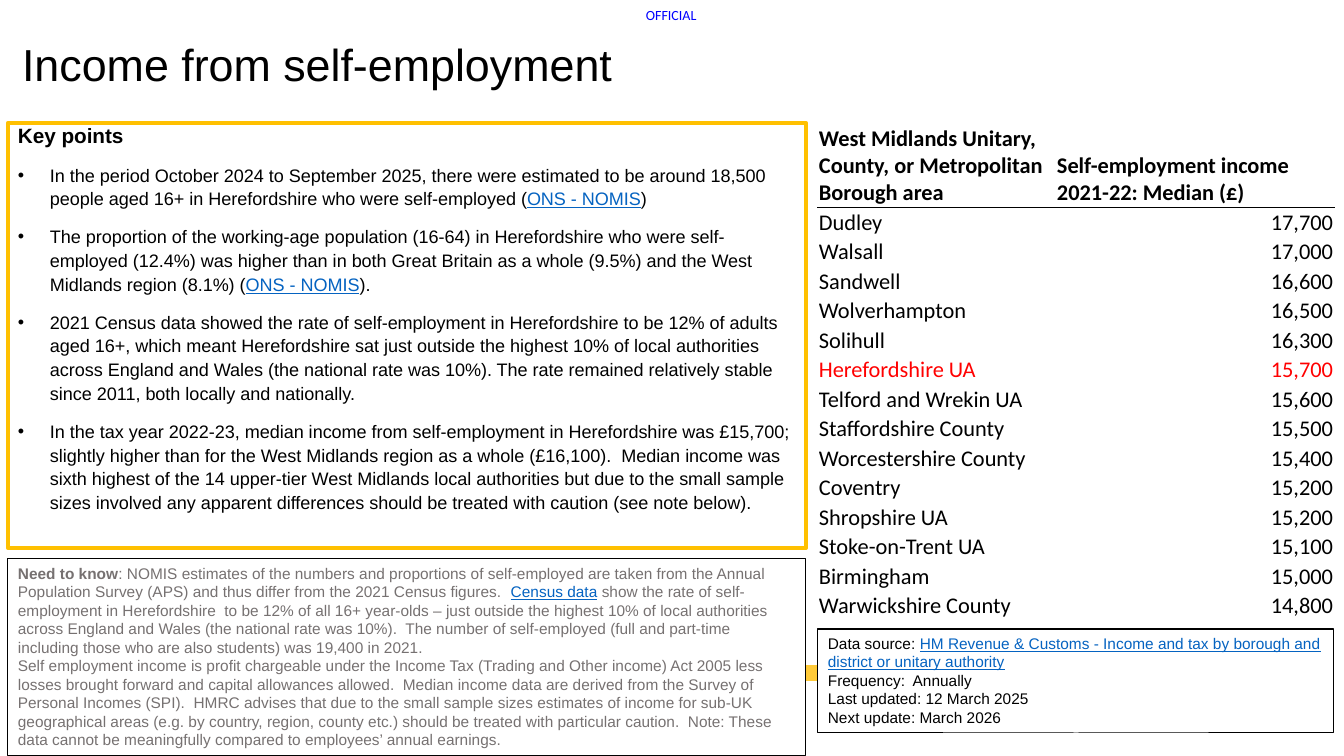
from lxml.etree import SubElement
from pptx import Presentation
from pptx.dml.color import RGBColor
from pptx.enum.shapes import MSO_SHAPE
from pptx.enum.text import MSO_ANCHOR, MSO_AUTO_SIZE, PP_ALIGN
from pptx.oxml.ns import qn
from pptx.util import Pt

PX = 914400 / 100.8
COLORS = {"black": "000000", "white": "FFFFFF", "grey": "767171", "link": "0563C1",
          "red": "FF0000", "blue": "0000FF", "gold": "FFC000", "band": "FFCA38"}
BOLD = {"bold": True}
LINK = {"color": "link", "underline": True}
BULLET = {"line_spacing": 1.1, "space_before": Pt(10)}

KEY_POINTS = [
    [("In the period October 2024 to September 2025, there were estimated to be around 18,500 "
      "people aged 16+ in Herefordshire who were self-employed (", {}),
     ("ONS - NOMIS", LINK), (")", {})],
    [("The proportion of the working-age population (16-64) in Herefordshire who were "
      "self-employed (12.4%) was higher than in both Great Britain as a whole (9.5%) and the "
      "West Midlands region (8.1%) (", {}),
     ("ONS - NOMIS", LINK), (").", {})],
    [("2021 Census data showed the rate of self-employment in Herefordshire to be 12% of adults "
      "aged 16+, which meant Herefordshire sat just outside the highest 10% of local authorities "
      "across England and Wales (the national rate was 10%). The rate remained relatively stable "
      "since 2011, both locally and nationally.", {})],
    [("In the tax year 2022-23, median income from self-employment in Herefordshire was £15,700; "
      "slightly higher than for the West Midlands region as a whole (£16,100).  Median income was "
      "sixth highest of the 14 upper-tier West Midlands local authorities but due to the small "
      "sample sizes involved any apparent differences should be treated with caution (see note "
      "below).", {})],
]
NEED_TO_KNOW = [
    [("Need to know", BOLD),
     (": NOMIS estimates of the numbers and proportions of self-employed are taken from the "
      "Annual Population Survey (APS) and thus differ from the 2021 Census figures.  ", {}),
     ("Census data", LINK),
     (" show the rate of self-employment in Herefordshire  to be 12% of all 16+ year-olds – just "
      "outside the highest 10% of local authorities across England and Wales (the national rate "
      "was 10%).  The number of self-employed (full and part-time including those who are also "
      "students) was 19,400 in 2021.", {})],
    [("Self employment income is profit chargeable under the Income Tax (Trading and Other "
      "income) Act 2005 less losses brought forward and capital allowances allowed.  Median "
      "income data are derived from the Survey of Personal Incomes (SPI).  HMRC advises that due "
      "to the small sample sizes estimates of income for sub-UK geographical areas (e.g. by "
      "country, region, county etc.) should be treated with particular caution.  Note: These "
      "data cannot be meaningfully compared to employees’ annual earnings.", {})],
]
DATA_SOURCE = [
    [("Data source: ", {}),
     ("HM Revenue & Customs - Income and tax by borough and district or unitary authority", LINK)],
    [("Frequency:  Annually", {})],
    [("Last updated: 12 March 2025", {})],
    [("Next update: March 2026", {})],
]
HEADINGS = ("West Midlands Unitary, County, or Metropolitan Borough area",
            "Self-employment income 2021-22: Median (£)")
INCOMES = [
    ("Dudley", 17700), ("Walsall", 17000), ("Sandwell", 16600), ("Wolverhampton", 16500),
    ("Solihull", 16300), ("Herefordshire UA", 15700), ("Telford and Wrekin UA", 15600),
    ("Staffordshire County", 15500), ("Worcestershire County", 15400), ("Coventry", 15200),
    ("Shropshire UA", 15200), ("Stoke-on-Trent UA", 15100), ("Birmingham", 15000),
    ("Warwickshire County", 14800),
]


def px(n):
    return round(n * PX)


def rgb(name):
    return RGBColor.from_string(COLORS[name])


def set_attrs(obj, values):
    for name, value in values.items():
        setattr(obj, name, value)


def write(p, runs, size, color="black", font="Arial", **form):
    """Fill a paragraph with (text, style) runs and set its paragraph format."""
    set_attrs(p, form)
    for text, style in runs:
        r = p.add_run()
        r.text = text
        values = {"name": font, "size": Pt(size), "bold": False} | style
        r.font.color.rgb = rgb(values.pop("color", color))
        set_attrs(r.font, values)


def add_bullet(p):
    pPr = p._p.get_or_add_pPr()
    pPr.set("marL", str(px(32)))
    pPr.set("indent", str(-px(32)))
    SubElement(pPr, qn("a:buFont"), typeface="Arial")
    SubElement(pPr, qn("a:buChar"), char="•")


def next_paragraph(tf):
    return tf.add_paragraph() if tf.paragraphs[0].runs else tf.paragraphs[0]


def add_box(s, box, fill=None, line=None, weight=0.75):
    sp = s.shapes.add_shape(MSO_SHAPE.RECTANGLE, *map(px, box))
    sp.shadow.inherit = False
    if fill:
        sp.fill.solid()
        sp.fill.fore_color.rgb = rgb(fill)
    else:
        sp.fill.background()
    if line:
        sp.line.color.rgb = rgb(line)
        sp.line.width = Pt(weight)
    else:
        sp.line.fill.background()
    tf = sp.text_frame
    set_attrs(tf, {"word_wrap": True, "vertical_anchor": MSO_ANCHOR.TOP})
    return tf


def add_note(s, box, paragraphs, color):
    tf = add_box(s, box, "white", "black")
    for runs in paragraphs:
        write(next_paragraph(tf), runs, 11, color, alignment=PP_ALIGN.LEFT)


def add_key_points(s):
    tf = add_box(s, (8, 123, 798, 425), line="gold", weight=3)
    write(tf.paragraphs[0], [("Key points", BOLD)], 14.8,
          alignment=PP_ALIGN.LEFT, line_spacing=0.8)
    for runs in KEY_POINTS:
        p = tf.add_paragraph()
        add_bullet(p)
        write(p, runs, 12.9, alignment=PP_ALIGN.LEFT, **BULLET)


def add_title(s):
    title = s.shapes.title
    set_attrs(title, dict(zip(("left", "top", "width", "height"), map(px, (12, 7, 836, 89)))))
    tf = title.text_frame
    set_attrs(tf, {"vertical_anchor": MSO_ANCHOR.BOTTOM, "auto_size": MSO_AUTO_SIZE.NONE})
    write(tf.paragraphs[0], [("Income from self-employment", {})], 32,
          alignment=PP_ALIGN.LEFT, line_spacing=0.9)


def add_marking(s):
    tf = s.shapes.add_textbox(*map(px, (646, 7, 53, 17))).text_frame
    set_attrs(tf, dict.fromkeys(("margin_left", "margin_top", "margin_right", "margin_bottom"), 0))
    write(tf.paragraphs[0], [("OFFICIAL", {})], 10, "blue", "Calibri")


def add_border(cell, side):
    ln = SubElement(cell._tc.get_or_add_tcPr(), qn(f"a:{side}"), w=str(Pt(0.5)))
    fill = SubElement(ln, qn("a:solidFill"))
    SubElement(fill, qn("a:srgbClr"), val=COLORS["black"])


def add_income_table(s):
    rows = [HEADINGS] + [(area, f"{income:,}") for area, income in INCOMES]
    table = s.shapes.add_table(len(rows), 2, *map(px, (818, 123, 516, 497))).table
    set_attrs(table, {"first_row": False, "horz_banding": False})
    for column, width in zip(table.columns, (238, 278)):
        column.width = px(width)
    for i, row in enumerate(rows):
        table.rows[i].height = px(413) // len(INCOMES) if i else px(84)
        color = "red" if row[0] == "Herefordshire UA" else "black"
        for j, text in enumerate(row):
            cell = table.cell(i, j)
            set_attrs(cell, {"margin_left": px(1), "margin_top": px(1), "margin_right": px(1),
                             "margin_bottom": 0, "vertical_anchor": MSO_ANCHOR.BOTTOM})
            if i < 2:
                add_border(cell, "lnT" if i else "lnB")
            cell.fill.background()
            align = PP_ALIGN.RIGHT if i and j else PP_ALIGN.LEFT
            write(cell.text_frame.paragraphs[0], [(text, {"bold": i == 0})], 16, color,
                  "Calibri", alignment=align)


def main():
    prs = Presentation()
    set_attrs(prs, {"slide_width": px(1344), "slide_height": px(756)})
    s = prs.slides.add_slide(prs.slide_layouts[5])
    add_box(s, (31, 665, 1270, 16), "band")
    add_marking(s)
    add_title(s)
    add_key_points(s)
    add_income_table(s)
    add_note(s, (818, 629, 516, 104), DATA_SOURCE, "black")
    add_note(s, (8, 559, 798, 197), NEED_TO_KNOW, "grey")
    prs.save("out.pptx")


if __name__ == "__main__":
    main()
